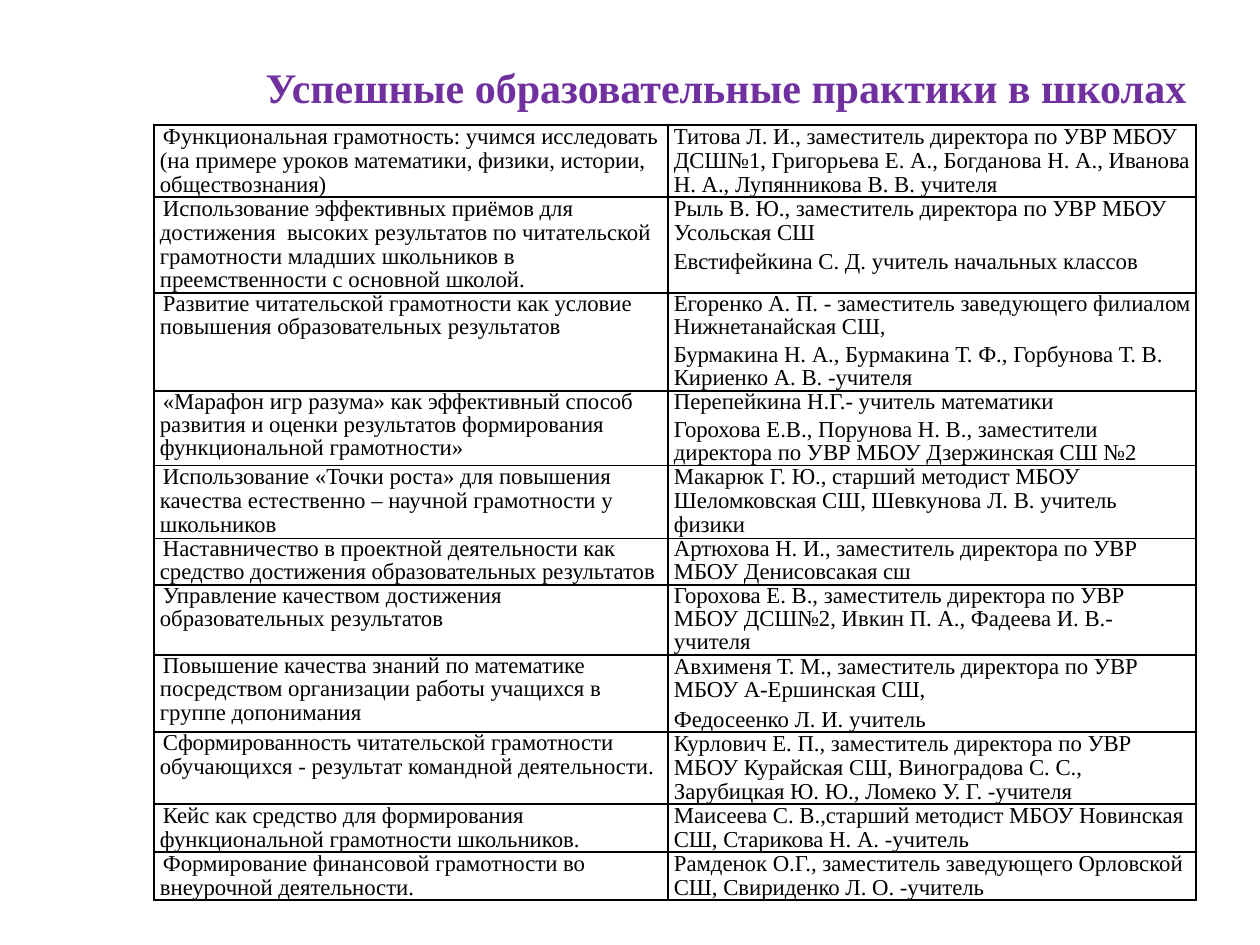
import pptx
import pptx.util
from pptx.dml.color import RGBColor
from pptx.enum.text import MSO_ANCHOR, MSO_AUTO_SIZE, PP_ALIGN
from lxml import etree

# Content
TITLE = "Успешные образовательные практики в школах"
# practice, authors (one string a paragraph), row height in px, line spacings in pt
ROWS = [
    ("Функциональная грамотность: учимся исследовать (на примере уроков математики, физики, истории, обществознания)",
     ["Титова Л. И., заместитель директора по УВР МБОУ ДСШ№1, Григорьева Е. А., Богданова Н. А., Иванова Н. А., Лупянникова В. В. учителя"],
     72, (13.7, 13.7)),
    ("Использование эффективных приёмов для достижения  высоких результатов по читательской грамотности младших школьников в преемственности с основной школой.",
     ["Рыль В. Ю., заместитель директора по УВР МБОУ Усольская СШ",
      "Евстифейкина С. Д. учитель начальных классов"],
     96, (13.7, 13.7)),
    ("Развитие читательской грамотности как условие повышения образовательных результатов",
     ["Егоренко А. П. - заместитель заведующего филиалом Нижнетанайская СШ,",
      "Бурмакина Н. А., Бурмакина Т. Ф., Горбунова Т. В. Кириенко А. В. -учителя"],
     98, (13.2, 13.2)),
    ("«Марафон игр разума» как эффективный способ развития и оценки результатов формирования функциональной грамотности»",
     ["Перепейкина Н.Г.- учитель математики",
      "Горохова Е.В., Порунова Н. В., заместители директора по УВР МБОУ Дзержинская СШ №2"],
     74, (13.2, 13.2)),
    ("Использование «Точки роста» для повышения качества естественно – научной грамотности у школьников",
     ["Макарюк Г. Ю., старший методист МБОУ Шеломковская СШ, Шевкунова Л. В. учитель физики"],
     73, (13.7, 13.7)),
    ("Наставничество в проектной деятельности как средство достижения образовательных результатов",
     ["Артюхова Н. И., заместитель директора по УВР МБОУ Денисовсакая сш"],
     45, (13.2, 13.2)),
    ("Управление качеством достижения образовательных результатов",
     ["Горохова Е. В., заместитель директора по УВР МБОУ ДСШ№2, Ивкин П. А., Фадеева И. В.- учителя"],
     70, (13.2, 13.2)),
    ("Повышение качества знаний по математике посредством организации работы учащихся в группе допонимания",
     ["Авхименя Т. М., заместитель директора по УВР МБОУ А-Ершинская СШ,",
      "Федосеенко Л. И. учитель"],
     77, (13.4, 13.7)),
    ("Сформированность читательской грамотности обучающихся - результат командной деятельности.",
     ["Курлович Е. П., заместитель директора по УВР МБОУ Курайская СШ, Виноградова С. С., Зарубицкая Ю. Ю., Ломеко У. Г. -учителя"],
     72, (13.4, 13.7)),
    ("Кейс как средство для формирования функциональной грамотности школьников.",
     ["Маисеева С. В.,старший методист МБОУ Новинская СШ, Старикова Н. А. -учитель"],
     48, (13.7, 13.7)),
    ("Формирование финансовой грамотности во внеурочной деятельности.",
     ["Рамденок О.Г., заместитель заведующего Орловской СШ, Свириденко Л. О. -учитель"],
     48, (13.7, 13.7)),
]
BOTTOM_CELLS = {(5, 0), (7, 1)}
COL_WIDTHS = (514, 528)
COLORS = {"title": "7030A0", "text": "000000", "border": "000000", "cell": "FFFFFF"}
FONT = "Times New Roman"
NS = "http://schemas.openxmlformats.org/drawingml/2006/main"


def px(n):
    return pptx.util.Emu(round(n * 914400 / 126))


def put_text(tf, paragraphs, size, color, bold=False, line=None, indent=0):
    for i, text in enumerate(paragraphs):
        p = tf.paragraphs[0] if i == 0 else tf.add_paragraph()
        p.alignment = PP_ALIGN.LEFT
        if line:
            p.line_spacing = pptx.util.Pt(line)
        if i:
            p.space_before = pptx.util.Pt(3)
        if indent:
            p._p.get_or_add_pPr().set("indent", str(px(indent)))
        r = p.add_run()
        r.text = text
        r.font.name = FONT
        r.font.size = pptx.util.Pt(size)
        r.font.bold = bold
        r.font.color.rgb = RGBColor.from_string(color)


def add_borders(cell):
    tcPr = cell._tc.get_or_add_tcPr()
    for i, side in enumerate(("lnL", "lnR", "lnT", "lnB")):
        ln = etree.Element(f"{{{NS}}}{side}", w="12700")
        fill = etree.SubElement(ln, f"{{{NS}}}solidFill")
        etree.SubElement(fill, f"{{{NS}}}srgbClr", val=COLORS["border"])
        tcPr.insert(i, ln)


prs = pptx.Presentation()
prs.slide_width, prs.slide_height = px(1260), px(945)
s = prs.slides.add_slide(prs.slide_layouts[5])

# Title
title = s.shapes.title
title.left, title.top, title.width, title.height = px(253), px(55), px(963), px(63)
tf = title.text_frame
tf.word_wrap = True
tf.auto_size = MSO_AUTO_SIZE.NONE
tf.vertical_anchor = MSO_ANCHOR.MIDDLE
put_text(tf, [TITLE], 24, COLORS["title"], bold=True)

# Table of practices and their authors
heights = [row[2] for row in ROWS]
table = s.shapes.add_table(len(ROWS), 2, px(154), px(125),
                           px(sum(COL_WIDTHS)), px(sum(heights))).table
table.first_row = table.horz_banding = False
for col, width in zip(table.columns, COL_WIDTHS):
    col.width = px(width)
for i, (practice, authors, height, lines) in enumerate(ROWS):
    table.rows[i].height = px(height)
    for j, paragraphs in enumerate(([practice], authors)):
        cell = table.cell(i, j)
        cell.margin_left = cell.margin_right = px(6)
        cell.margin_top = cell.margin_bottom = 0
        cell.vertical_anchor = MSO_ANCHOR.BOTTOM if (i, j) in BOTTOM_CELLS else MSO_ANCHOR.TOP
        cell.fill.solid()
        cell.fill.fore_color.rgb = RGBColor.from_string(COLORS["cell"])
        add_borders(cell)
        put_text(cell.text_frame, paragraphs, 13, COLORS["text"],
                 line=lines[j], indent=3 if j == 0 else 0)

prs.save("out.pptx")
